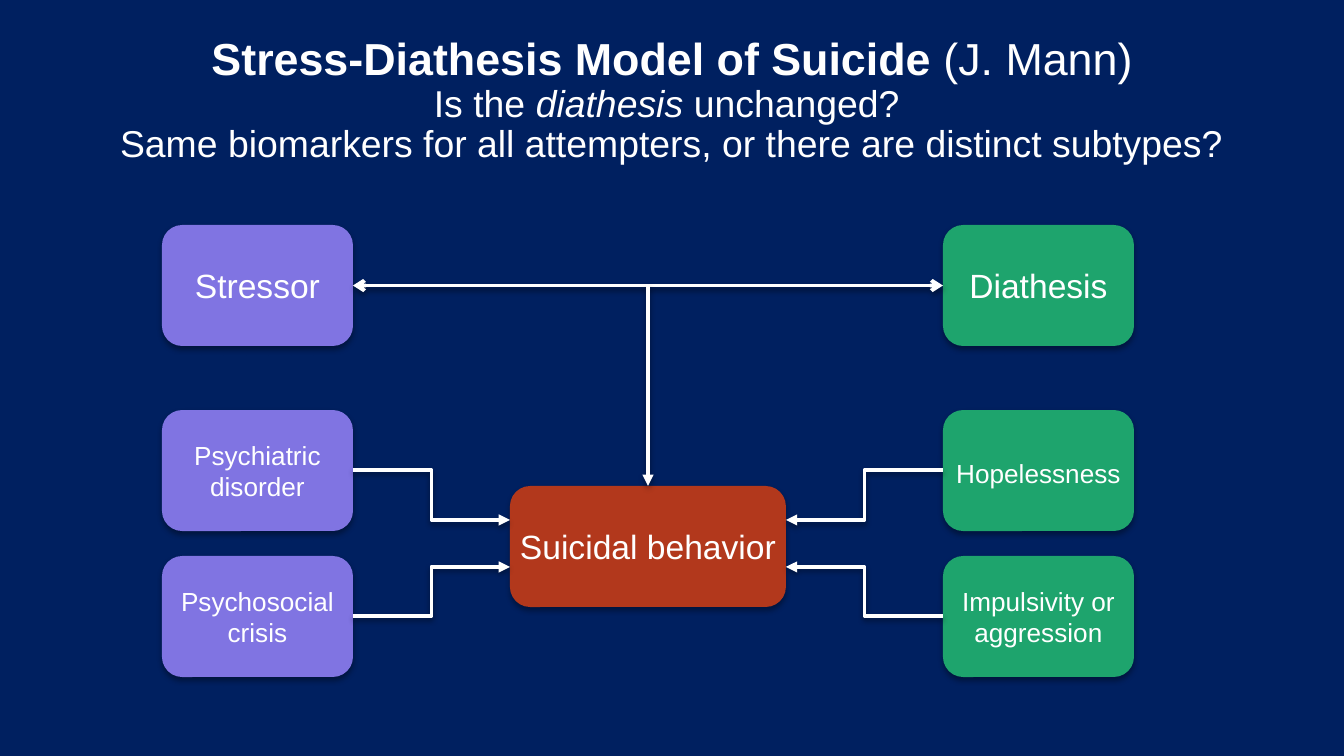
from dataclasses import dataclass

from lxml.etree import SubElement
from pptx import Presentation
from pptx.dml.color import RGBColor
from pptx.enum.shapes import MSO_CONNECTOR as Route, MSO_SHAPE as Preset
from pptx.enum.text import MSO_ANCHOR as Anchor, PP_ALIGN as Align
from pptx.oxml.ns import qn
from pptx.util import Emu, Pt

SLIDE_WIDTH, SLIDE_HEIGHT = 1344, 756
EMU_PER_PX = 9144000 / SLIDE_WIDTH

NAVY = RGBColor(0x00, 0x20, 0x60)
WHITE = RGBColor(0xFF, 0xFF, 0xFF)
GREEN = RGBColor(0x1E, 0xA4, 0x6D)
PURPLE = RGBColor(0x80, 0x74, 0xE2)
RUST = RGBColor(0xB2, 0x38, 0x1C)

BOX_WIDTH, BOX_HEIGHT = 191, 121
LEFT_X, RIGHT_X = 162, 943
TOP_Y, MIDDLE_Y, BOTTOM_Y = 225, 410, 556
DEFAULT_INSETS = (13, 7, 13, 7)
NARROW_INSETS = (0, 7, 0, 7)


@dataclass(frozen=True)
class Box:
    text: str
    left: int
    top: int
    color: RGBColor
    size: int = 14
    width: int = BOX_WIDTH
    insets: tuple[int, int, int, int] = DEFAULT_INSETS

    @property
    def right(self) -> int:
        return self.left + self.width

    @property
    def center_x(self) -> int:
        return self.left + self.width // 2

    @property
    def center_y(self) -> int:
        return self.top + BOX_HEIGHT // 2


STRESSOR = Box("Stressor", LEFT_X, TOP_Y, PURPLE, 18)
DIATHESIS = Box("Diathesis", RIGHT_X, TOP_Y, GREEN, 18)
DISORDER = Box("Psychiatric disorder", LEFT_X, MIDDLE_Y, PURPLE)
CRISIS = Box("Psychosocial crisis", LEFT_X, BOTTOM_Y, PURPLE, insets=NARROW_INSETS)
HOPELESSNESS = Box("Hopelessness", RIGHT_X, MIDDLE_Y, GREEN, insets=(0, 13, 0, 7))
IMPULSIVITY = Box("Impulsivity or aggression", RIGHT_X, BOTTOM_Y, GREEN)
BEHAVIOR = Box("Suicidal behavior", 510, 486, RUST, 18, 276, NARROW_INSETS)
BOXES = (DIATHESIS, HOPELESSNESS, IMPULSIVITY, BEHAVIOR, DISORDER, STRESSOR, CRISIS)


def px(length: float) -> Emu:
    return Emu(round(length * EMU_PER_PX))


def add_text(paragraph, text: str, *, size: int, bold=False, italic=False):
    run = paragraph.add_run()
    run.text = text
    font = run.font
    font.name, font.size = "Arial", Pt(size)
    font.bold, font.italic = bold, italic
    font.color.rgb = WHITE


def prepare_frame(shape, insets: tuple[int, int, int, int]):
    """Center and wrap the shape's text; return its first paragraph."""
    frame = shape.text_frame
    frame.word_wrap = True
    frame.vertical_anchor = Anchor.MIDDLE
    (frame.margin_left, frame.margin_top,
     frame.margin_right, frame.margin_bottom) = map(px, insets)
    paragraph = frame.paragraphs[0]
    paragraph.alignment = Align.CENTER
    return paragraph


def add_shadow(effects, distance: float, opacity: int):
    """Put a soft shadow that falls straight down into an effect list."""
    shadow = SubElement(effects, qn("a:outerShdw"), blurRad=str(Pt(3.1)),
                        dist=str(Pt(distance)), dir="5400000", rotWithShape="0")
    color = SubElement(shadow, qn("a:srgbClr"), val="000000")
    SubElement(color, qn("a:alpha"), val=str(opacity * 1000))


def add_title(slide):
    shape = slide.shapes.add_textbox(px(52), px(23), px(1240), px(156))
    paragraph = prepare_frame(shape, DEFAULT_INSETS)
    paragraph.line_spacing = 0.9
    paragraph.space_after = Pt(18)
    add_text(paragraph, "Stress-Diathesis Model of Suicide ", size=24, bold=True)
    add_text(paragraph, "(J. Mann)", size=24)
    paragraph.add_line_break()
    add_text(paragraph, "Is the ", size=20)
    add_text(paragraph, "diathesis", size=20, italic=True)
    add_text(paragraph, " unchanged? ", size=20)
    paragraph.add_line_break()
    add_text(paragraph, "Same biomarkers for all attempters, "
             "or there are distinct subtypes?", size=20)


def add_box(slide, box: Box):
    shape = slide.shapes.add_shape(Preset.ROUNDED_RECTANGLE, px(box.left), px(box.top),
                                   px(box.width), px(BOX_HEIGHT))
    shape.fill.solid()
    shape.fill.fore_color.rgb = box.color
    shape.line.fill.background()
    shape.shadow.inherit = False
    add_shadow(shape.element.spPr.find(qn("a:effectLst")), 1.8, 35)
    add_text(prepare_frame(shape, box.insets), box.text, size=box.size)
    return shape


def add_arrow(slide, route: Route, start: tuple[int, int], end: tuple[int, int], *,
              head: str = "none", tail: str = "triangle"):
    connector = slide.shapes.add_connector(route, *map(px, start + end))
    connector.line.color.rgb = WHITE
    connector.line.width = Pt(2)
    properties = connector.element.spPr
    line = properties.find(qn("a:ln"))
    SubElement(line, qn("a:headEnd"), type=head)
    SubElement(line, qn("a:tailEnd"), type=tail)
    add_shadow(SubElement(properties, qn("a:effectLst")), 1.6, 38)
    return connector


def main():
    presentation = Presentation()
    presentation.slide_width = px(SLIDE_WIDTH)
    presentation.slide_height = px(SLIDE_HEIGHT)
    slide = presentation.slides.add_slide(presentation.slide_layouts[6])
    slide.background.fill.solid()
    slide.background.fill.fore_color.rgb = NAVY

    add_title(slide)
    shapes = {box: add_box(slide, box) for box in BOXES}

    interaction = add_arrow(slide, Route.ELBOW, (STRESSOR.right, STRESSOR.center_y),
                            (DIATHESIS.left, DIATHESIS.center_y),
                            head="arrow", tail="arrow")
    interaction.begin_connect(shapes[STRESSOR], 3)
    interaction.end_connect(shapes[DIATHESIS], 1)

    upper_y, lower_y = BEHAVIOR.top + 34, BEHAVIOR.top + 81
    for box, y in ((DISORDER, upper_y), (CRISIS, lower_y)):
        add_arrow(slide, Route.ELBOW, (box.right, box.center_y), (BEHAVIOR.left, y))
    for box, y in ((HOPELESSNESS, upper_y), (IMPULSIVITY, lower_y)):
        add_arrow(slide, Route.ELBOW, (box.left, box.center_y), (BEHAVIOR.right, y))

    outcome = add_arrow(slide, Route.STRAIGHT, (BEHAVIOR.center_x, STRESSOR.center_y),
                        (BEHAVIOR.center_x, BEHAVIOR.top))
    outcome.end_connect(shapes[BEHAVIOR], 0)

    presentation.save("out.pptx")


if __name__ == "__main__":
    main()
